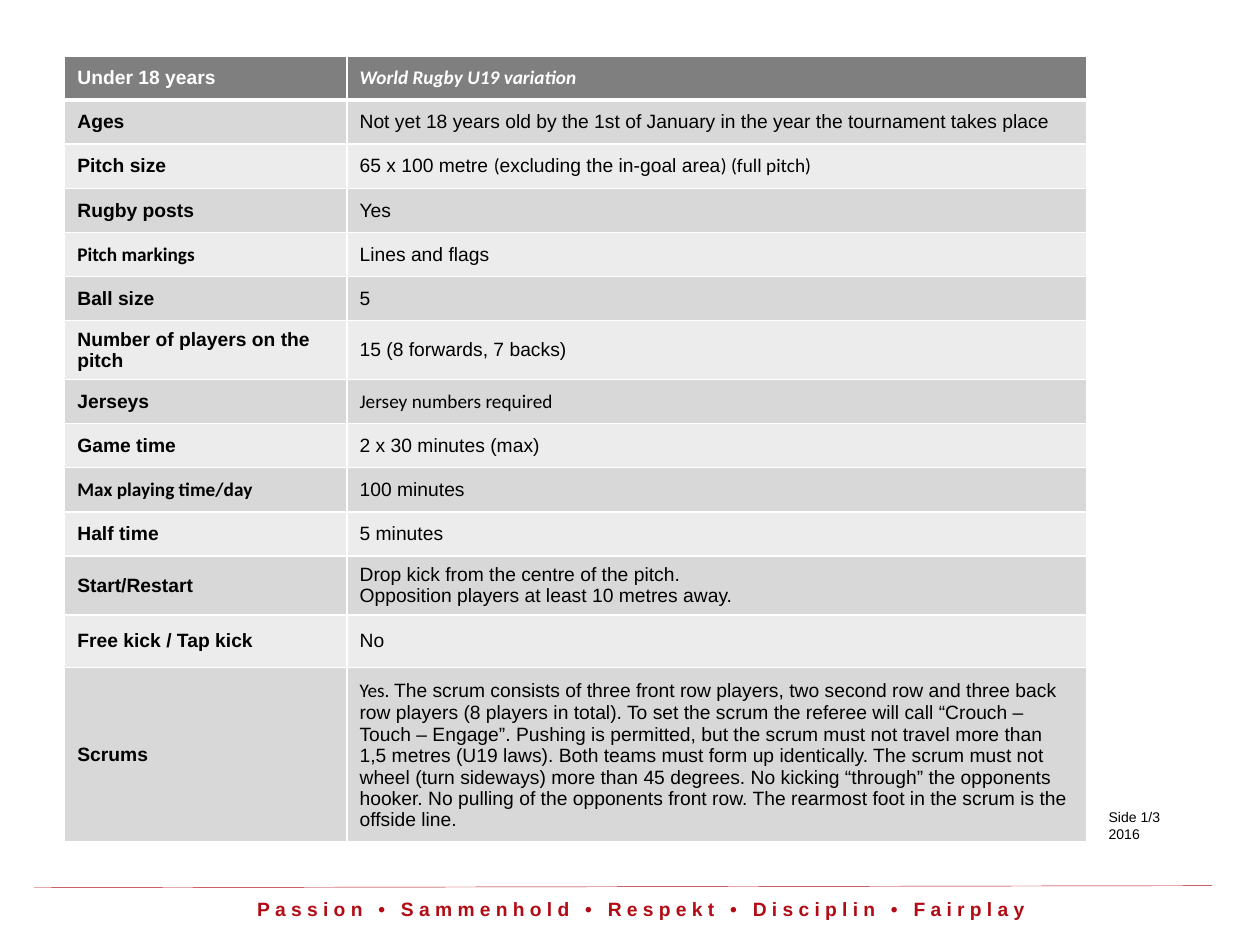
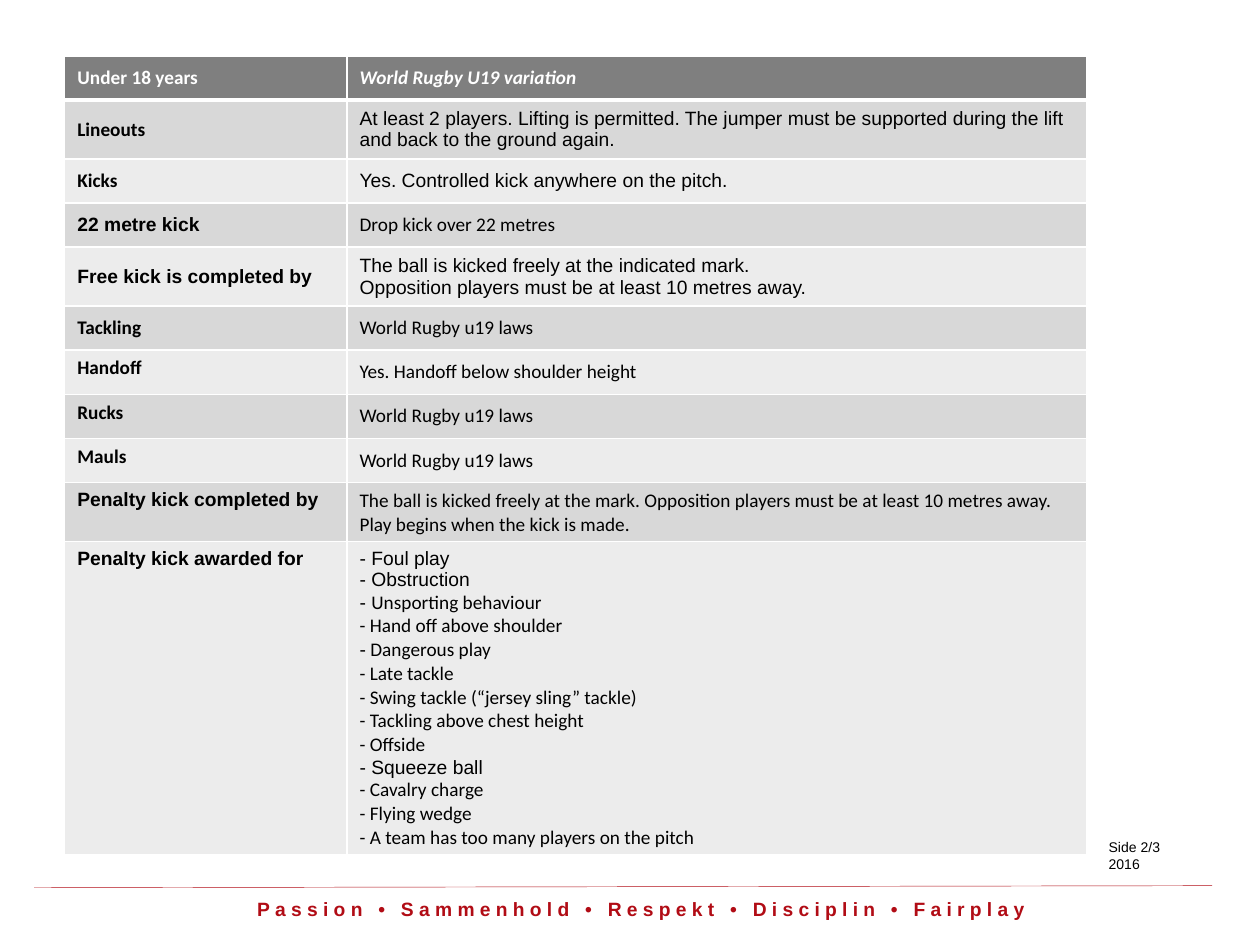
"""Builds two slides of under 18 rugby rules as tables with a shared footer."""
from dataclasses import dataclass

from lxml.etree import SubElement
from pptx import Presentation
from pptx.dml.color import RGBColor as Color
from pptx.enum.shapes import MSO_CONNECTOR as Connector
from pptx.enum.text import MSO_ANCHOR as Anchor, PP_ALIGN as Align
from pptx.oxml.ns import qn
from pptx.util import Pt


@dataclass(frozen=True)
class Theme:
    red: str = "B10C15"
    white: str = "FFFFFF"
    black: str = "000000"
    header: str = "7F7F7F"
    bands: tuple = ("ECECEC", "D8D8D8")
    body_size: int = 11
    side_size: int = 8
    row_height: float = 25.2
    double_height: float = 33.6


theme = Theme()
ARIAL, CALIBRI = "Arial", "Calibri"


def write(frame, lines, size=theme.body_size, color=theme.black, bold=False,
          italic=False, align=Align.LEFT, tracking=0):
    """Fill a text frame with lines, each a list of (font, text) spans."""
    frame.word_wrap = True
    for number, line in enumerate(lines):
        para = frame.add_paragraph() if number else frame.paragraphs[0]
        para.alignment = align
        for font, text in line:
            span = para.add_run()
            span.text = text
            span.font.name = font
            span.font.size = Pt(size)
            span.font.bold = bold
            span.font.italic = italic
            span.font.color.rgb = Color.from_string(color)
            if tracking:
                span.font._element.set("spc", str(tracking * 100))


def style_cell(cell, fill, bottom, anchor):
    """Give a cell white borders, a fill and a vertical anchor."""
    props = cell._tc.get_or_add_tcPr()
    for side, width in (("L", 1), ("R", 1), ("T", 1), ("B", bottom)):
        border = SubElement(props, qn(f"a:ln{side}"), w=str(Pt(width)))
        paint = SubElement(border, qn("a:solidFill"))
        SubElement(paint, qn("a:srgbClr"), val=theme.white)
    cell.fill.solid()
    cell.fill.fore_color.rgb = Color.from_string(fill)
    cell.vertical_anchor = anchor


single, double = theme.row_height, theme.double_height
middle, top = Anchor.MIDDLE, Anchor.TOP
variation = [[(CALIBRI, "World Rugby U19 variation")]]
u19_laws = [[(CALIBRI, "World Rugby u19 laws")]]

match_rules = [
    (single, middle, ARIAL, "Under 18 years", variation),
    (single, middle, ARIAL, "Ages",
     [[(ARIAL, "Not yet 18 years old by the 1st of January in the year "
               "the tournament takes place")]]),
    (single, middle, ARIAL, "Pitch size",
     [[(ARIAL, "65 x 100 metre "), (CALIBRI, "("),
       (ARIAL, "excluding the in-goal area"), (CALIBRI, ") (full pitch)")]]),
    (single, middle, ARIAL, "Rugby posts", [[(ARIAL, "Yes")]]),
    (single, middle, CALIBRI, "Pitch markings", [[(ARIAL, "Lines and flags")]]),
    (single, middle, ARIAL, "Ball size", [[(ARIAL, "5")]]),
    (double, middle, ARIAL, "Number of players on the pitch",
     [[(ARIAL, "15 (8 forwards, 7 backs)")]]),
    (single, middle, ARIAL, "Jerseys", [[(CALIBRI, "Jersey numbers required")]]),
    (single, middle, ARIAL, "Game time", [[(ARIAL, "2 x 30 minutes (max)")]]),
    (single, middle, CALIBRI, "Max playing time/day", [[(ARIAL, "100 minutes")]]),
    (single, middle, ARIAL, "Half time", [[(ARIAL, "5 minutes")]]),
    (double, middle, ARIAL, "Start/Restart",
     [[(ARIAL, "Drop kick from the centre of the pitch.")],
      [(ARIAL, "Opposition players at least 10 metres away.")]]),
    (30.2, middle, ARIAL, "Free kick / Tap kick", [[(ARIAL, "No")]]),
    (99.4, middle, ARIAL, "Scrums",
     [[(CALIBRI, "Yes. "),
       (ARIAL, "The scrum consists of three front row players, two second row "
               "and three back row players (8 players in total). To set the "
               "scrum the referee will call “Crouch – Touch – Engage”. Pushing "
               "is permitted, but the scrum must not travel more than 1,5 "
               "metres (U19 laws). Both teams must form up identically. The "
               "scrum must not wheel (turn sideways) more than 45 degrees. No "
               "kicking “through” the opponents hooker. No pulling of the "
               "opponents front row. The rearmost foot in the scrum is the "
               "offside line.")]]),
]

play_rules = [
    (single, middle, CALIBRI, "Under 18 years", variation),
    (double, middle, CALIBRI, "Lineouts",
     [[(ARIAL, "At least 2 players. Lifting is permitted. The jumper must be "
               "supported during the lift and back to the ground again.")]]),
    (single, middle, CALIBRI, "Kicks",
     [[(ARIAL, "Yes. Controlled kick anywhere on the pitch.")]]),
    (single, middle, ARIAL, "22 metre kick",
     [[(CALIBRI, "Drop kick over 22 metres")]]),
    (double, middle, ARIAL, "Free kick is completed by",
     [[(ARIAL, "The ball is kicked freely at the indicated mark.")],
      [(ARIAL, "Opposition players must be at least 10 metres away.")]]),
    (single, middle, CALIBRI, "Tackling", u19_laws),
    (single, top, CALIBRI, "Handoff",
     [[(CALIBRI, "Yes. Handoff below shoulder height")]]),
    (single, top, CALIBRI, "Rucks", u19_laws),
    (single, top, CALIBRI, "Mauls", u19_laws),
    (double, top, ARIAL, "Penalty kick completed by",
     [[(CALIBRI, "The ball is kicked freely at the mark. Opposition players "
                 "must be at least 10 metres away.")],
      [(CALIBRI, "Play begins when the kick is made.")]]),
    (178, top, ARIAL, "Penalty kick awarded for",
     [[(ARIAL, "- Foul play")],
      [(ARIAL, "- Obstruction")],
      [(ARIAL, "- "), (CALIBRI, "Unsporting behaviour")],
      [(CALIBRI, "- Hand off above shoulder")],
      [(ARIAL, "-"), (CALIBRI, " Dangerous play")],
      [(CALIBRI, "- Late tackle")],
      [(CALIBRI, "- Swing tackle (“jersey sling” tackle)")],
      [(CALIBRI, "- Tackling above chest height")],
      [(CALIBRI, "- Offside")],
      [(ARIAL, "- Squeeze ball")],
      [(CALIBRI, "- Cavalry charge")],
      [(CALIBRI, "- Flying wedge")],
      [(CALIBRI, "- A team has too many players on the pitch")]]),
]

deck = Presentation()
deck.slide_width, deck.slide_height = Pt(720), Pt(540)

for rules, side, side_top in ((match_rules, "Side 1/3", 458.6),
                              (play_rules, "Side 2/3", 475.9)):
    page = deck.slides.add_slide(deck.slide_layouts[6])

    motto = page.shapes.add_textbox(Pt(121), Pt(509), Pt(491), Pt(30))
    write(motto.text_frame,
          [[(ARIAL, "Passion • Sammenhold • Respekt • Disciplin • Fairplay")]],
          color=theme.red, bold=True, align=Align.CENTER, tracking=3)

    rule = page.shapes.add_connector(Connector.STRAIGHT, Pt(19.5), Pt(507.3),
                                     Pt(692.6), Pt(506.1))
    rule.line.color.rgb = Color.from_string(theme.red)
    rule.line.width = Pt(0.25)
    SubElement(rule._element.spPr, qn("a:effectLst"))

    height = sum(row[0] for row in rules)
    table = page.shapes.add_table(len(rules), 2, Pt(37), Pt(32),
                                  Pt(584), Pt(height)).table
    table.horz_banding = False
    table.columns[0].width, table.columns[1].width = Pt(161.3), Pt(422.6)
    for index, (row_height, anchor, font, label, lines) in enumerate(rules):
        table.rows[index].height = Pt(row_height)
        heading = index == 0
        fill = theme.header if heading else theme.bands[index % 2]
        color = theme.white if heading else theme.black
        label_cell, rule_cell = table.cell(index, 0), table.cell(index, 1)
        style_cell(label_cell, fill, 3 if heading else 1, anchor)
        style_cell(rule_cell, fill, 3 if heading else 1, middle)
        write(label_cell.text_frame, [[(font, label)]], color=color, bold=True)
        write(rule_cell.text_frame, lines, color=color, bold=heading,
              italic=heading)

    side_box = page.shapes.add_textbox(Pt(626.4), Pt(side_top), Pt(82), Pt(26.6))
    write(side_box.text_frame, [[(ARIAL, side)], [(ARIAL, "2016")]],
          size=theme.side_size)

deck.save("out.pptx")
